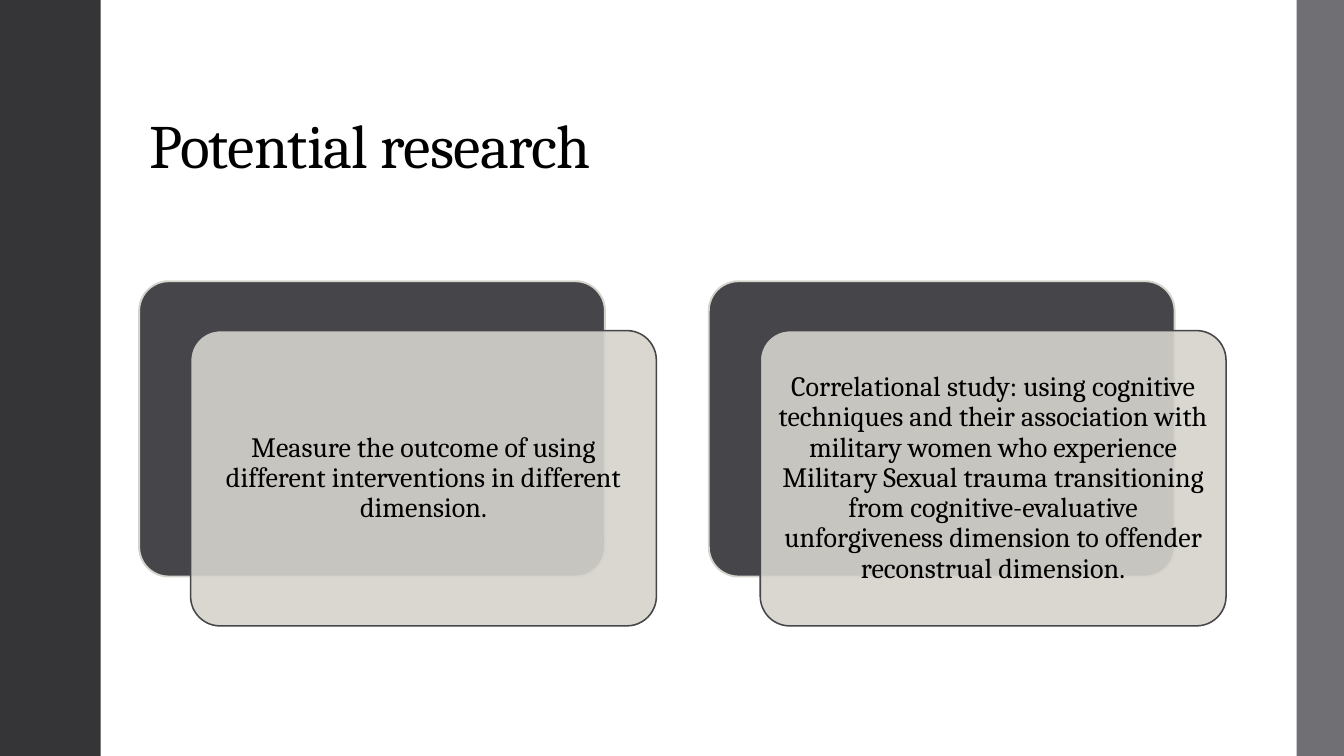
from lxml import etree
from pptx import Presentation
from pptx.dml.color import RGBColor
from pptx.enum.shapes import MSO_SHAPE
from pptx.enum.text import MSO_ANCHOR, PP_ALIGN
from pptx.oxml.ns import qn
from pptx.util import Inches, Pt

RECTANGLE = MSO_SHAPE.RECTANGLE
ROUNDED = MSO_SHAPE.ROUNDED_RECTANGLE
MIDDLE = MSO_ANCHOR.MIDDLE
BOTTOM = MSO_ANCHOR.BOTTOM
LEFT = PP_ALIGN.LEFT
CENTER = PP_ALIGN.CENTER

FONT = "Cambria"
BLACK = "000000"
CHARCOAL = "353537"
GREY = "6F6F74"
SLATE = "46464A"
STONE = "D6D3CC"

CARD_LEFT, CARD_TOP = 1.38, 2.79
CARD_WIDTH, CARD_HEIGHT = 4.62, 2.93
CARD_PITCH = 5.65
FRONT_SHIFT_X, FRONT_SHIFT_Y = 0.51, 0.49
IDEAS = (
    "Measure the outcome of using different interventions in different dimension.",
    "Correlational study: using cognitive techniques and their association with "
    "military women who experience Military Sexual trauma transitioning from "
    "cognitive-evaluative unforgiveness dimension to offender reconstrual dimension.",
)


def set_color(color_format, value):
    color_format.rgb = RGBColor.from_string(value)


def set_opacity(shape, percent):
    color = shape.fill._xPr.find(qn("a:solidFill"))[0]
    etree.SubElement(color, qn("a:alpha"), val=str(percent * 1000))


def write_text(shape, text, size, align, anchor, inset_x, inset_y, spacing=0):
    frame = shape.text_frame
    frame.word_wrap = True
    frame.vertical_anchor = anchor
    frame.margin_left = frame.margin_right = Inches(inset_x)
    frame.margin_top = frame.margin_bottom = Inches(inset_y)
    para = frame.paragraphs[0]
    para.alignment = align
    para.line_spacing = 0.9
    span = para.add_run()
    span.text = text
    span.font.size = Pt(size)
    span.font.name = FONT
    set_color(span.font.color, BLACK)
    if spacing:
        span._r.get_or_add_rPr().set("spc", str(round(spacing * 100)))


def add_box(page, kind, left, top, width, height, fill):
    box = page.shapes.add_shape(
        kind, Inches(left), Inches(top), Inches(width), Inches(height)
    )
    box.shadow.inherit = False
    box.fill.solid()
    set_color(box.fill.fore_color, fill)
    box.line.fill.background()
    return box


def add_panel(page, left, top, fill, outline, weight):
    panel = add_box(page, ROUNDED, left, top, CARD_WIDTH, CARD_HEIGHT, fill)
    panel.adjustments[0] = 0.1
    panel.line.width = Pt(weight)
    set_color(panel.line.color, outline)
    return panel


def add_card(page, left, text):
    add_panel(page, left, CARD_TOP, SLATE, STONE, 1.35)
    front = add_panel(
        page, left + FRONT_SHIFT_X, CARD_TOP + FRONT_SHIFT_Y, STONE, SLATE, 1.1
    )
    set_opacity(front, 90)
    write_text(front, text, size=20, align=CENTER, anchor=MIDDLE,
               inset_x=0.08, inset_y=0.08)


def add_title(page, text):
    title = page.shapes.add_textbox(
        Inches(1.38), Inches(0.4), Inches(10.78), Inches(1.45)
    )
    write_text(title, text, size=44, align=LEFT, anchor=BOTTOM,
               inset_x=0.1, inset_y=0.05, spacing=-0.5)


def main():
    deck = Presentation()
    deck.slide_width = Inches(13.33)
    deck.slide_height = Inches(7.5)
    page = deck.slides.add_slide(deck.slide_layouts[6])
    add_title(page, "Potential research")
    add_box(page, RECTANGLE, 0, 0, 1, 7.5, CHARCOAL)
    add_box(page, RECTANGLE, 12.86, 0, 0.47, 7.5, GREY)
    for index, idea in enumerate(IDEAS):
        add_card(page, CARD_LEFT + index * CARD_PITCH, idea)
    deck.save("out.pptx")


if __name__ == "__main__":
    main()
